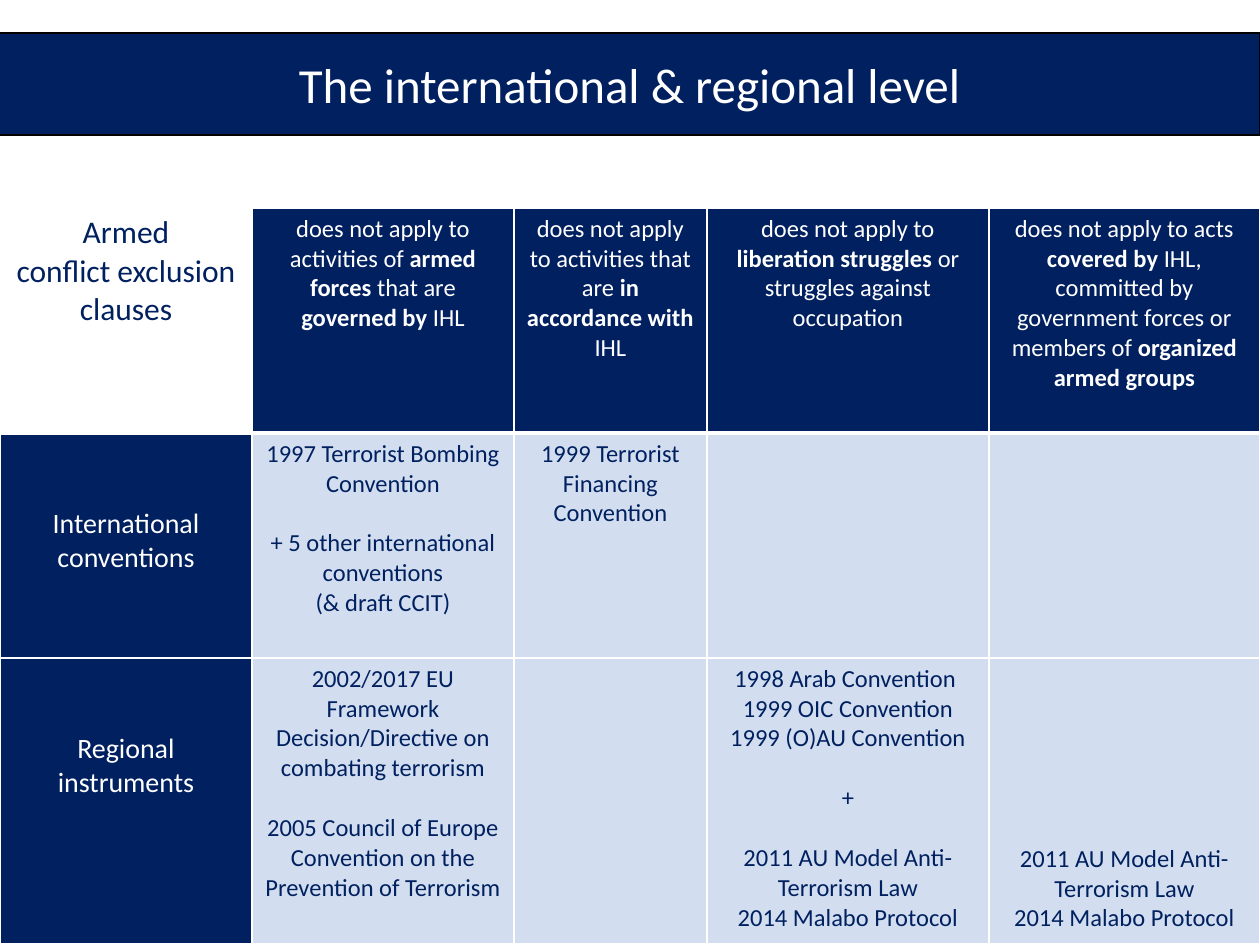
from lxml import etree
from pptx import Presentation
from pptx import util as u
from pptx.dml.color import RGBColor
from pptx.enum import text
from pptx.oxml.ns import qn

PX = 914400 / 126
NAVY = RGBColor(0x00, 0x20, 0x60)
PALE = RGBColor(0xD2, 0xDE, 0xEF)
WHITE = RGBColor(0xFF, 0xFF, 0xFF)
BLACK = RGBColor(0, 0, 0)
FONT = "Calibri"

COLS = [252, 262, 193, 282, 271]
ROWS = [225, 225, 286]
INSET = 6  # usual space above the text of a cell
LINE = 30  # one line of 14 pt text
CORNER = dict(fill=WHITE, color=NAVY, size=18)
HEAD = dict(fill=NAVY, color=WHITE, size=14)
SIDE = dict(fill=NAVY, color=WHITE, size=16, top=INSET + 68)
BODY = dict(fill=PALE, color=NAVY, size=14)
LOW = dict(BODY, top=INSET + 6 * LINE)

# A cell is a list of blocks set one line apart; a block is a list of
# paragraphs, in which ** switches bold on and off.
AU_TEXTS = ["2011 AU Model Anti-Terrorism Law", "2014 Malabo Protocol"]
CELLS = [
    [
        (CORNER, [["Armed", "conflict exclusion clauses"]]),
        (HEAD, [["does not apply to activities of **armed forces** that are "
                 "**governed by **IHL"]]),
        (HEAD, [["does not apply to activities that are "
                 "**in accordance with** IHL"]]),
        (HEAD, [["does not apply to **liberation struggles **or struggles "
                 "against occupation"]]),
        (HEAD, [["does not apply to acts **covered by **IHL, committed by "
                 "government forces or members of "
                 "**organized armed groups**"]]),
    ],
    [
        (SIDE, [["International", "conventions"]]),
        (BODY, [["1997 Terrorist Bombing Convention"],
                ["+ 5 other international conventions", "(& draft CCIT)"]]),
        (BODY, [["1999 Terrorist Financing Convention"]]),
        (BODY, []),
        (BODY, []),
    ],
    [
        (SIDE, [["Regional", "instruments"]]),
        (BODY, [["2002/2017 EU Framework Decision/Directive on combating "
                 "terrorism"],
                ["2005 Council of Europe Convention on the Prevention of "
                 "Terrorism"]]),
        (BODY, []),
        (BODY, [["1998 Arab Convention ", "1999 OIC Convention",
                 "1999 (O)AU Convention"], ["+"], AU_TEXTS]),
        (LOW, [AU_TEXTS]),
    ],
]


def px(n):
    return u.Emu(round(n * PX))


def add_run(p, words, size, color, bold=False):
    r = p.add_run()
    r.text = words
    for name, value in dict(name=FONT, size=u.Pt(size), bold=bold).items():
        setattr(r.font, name, value)
    r.font.color.rgb = color


def set_borders(cell, widths):
    """Draw white borders; widths maps L, R, T, B, in that order, to points."""
    tcPr = cell._tc.get_or_add_tcPr()
    for i, (side, width) in enumerate(widths.items()):
        ln = etree.Element(qn(f"a:ln{side}"), w=str(u.Pt(width)))
        fill = etree.SubElement(ln, qn("a:solidFill"))
        etree.SubElement(fill, qn("a:srgbClr"), val=str(WHITE))
        tcPr.insert(i, ln)


def fill_cell(cell, style, blocks):
    cell.fill.solid()
    cell.fill.fore_color.rgb = style["fill"]
    cell.margin_top = px(style.get("top", INSET))
    tf = cell.text_frame
    p = tf.paragraphs[0]
    for b, block in enumerate(blocks):
        for i, line in enumerate(block):
            if b or i:
                p = tf.add_paragraph()
            p.alignment = text.PP_ALIGN.CENTER
            if b and i == 0:
                p.space_before = px(LINE)
            for k, words in enumerate(line.split("**")):
                if words:
                    add_run(p, words, style["size"], style["color"], k % 2 == 1)


def add_title(s, x, y, w, h):
    sp = s.shapes.title
    box = dict(left=x, top=y, width=w, height=h)
    for name, value in box.items():
        setattr(sp, name, px(value))
    sp.fill.solid()
    sp.fill.fore_color.rgb = NAVY
    sp.line.color.rgb = BLACK
    sp.line.width = u.Pt(0.75)
    tf = sp.text_frame
    frame = dict(word_wrap=True, auto_size=text.MSO_AUTO_SIZE.NONE,
                 vertical_anchor=text.MSO_ANCHOR.MIDDLE)
    frame.update({f"margin_{side}": u.Inches(0.2)
                  for side in ("left", "top", "right", "bottom")})
    for name, value in frame.items():
        setattr(tf, name, value)
    p = tf.paragraphs[0]
    p.alignment = text.PP_ALIGN.CENTER
    p.space_before = u.Pt(0)
    p.space_after = u.Pt(9)
    add_run(p, "The international & regional level", 28, WHITE)


def add_clause_table(s, x, y):
    frame = s.shapes.add_table(len(ROWS), len(COLS), px(x), px(y),
                               px(sum(COLS)), px(sum(ROWS)))
    table = frame.table
    table.first_row = table.horz_banding = False
    for col, width in zip(table.columns, COLS):
        col.width = px(width)
    for i, (row, height) in enumerate(zip(table.rows, ROWS)):
        row.height = px(height)
        for cell, (style, blocks) in zip(row.cells, CELLS[i]):
            fill_cell(cell, style, blocks)
            set_borders(cell, dict(L=1, R=1, T=3 if i == 1 else 1,
                                   B=3 if i == 0 else 1))


def main():
    prs = Presentation()
    prs.slide_width, prs.slide_height = px(1260), px(945)
    s = prs.slides.add_slide(prs.slide_layouts[5])
    add_title(s, -1, 33, 1261, 102)
    add_clause_table(s, 0, 208)
    prs.save("out.pptx")


if __name__ == "__main__":
    main()
